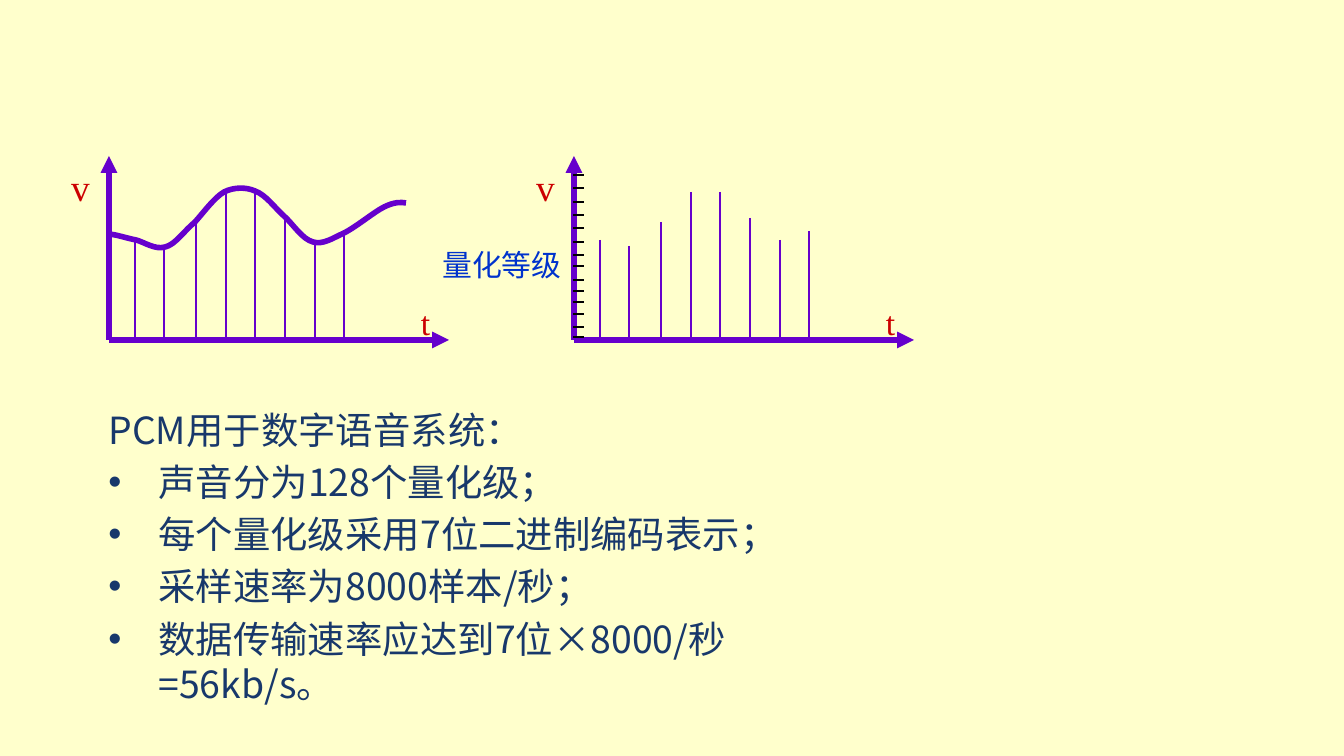
import lxml.etree
import pptx
import pptx.dml.color
import pptx.enum.shapes
import pptx.enum.text
import pptx.oxml.ns
import pptx.util
from dataclasses import dataclass

EMU_PER_PX = 914400 / 134.4
qn = pptx.oxml.ns.qn


@dataclass(frozen=True)
class Theme:
    background: str = "FFFFCC"
    signal: str = "6600CC"
    tick: str = "000000"
    body: str = "18386B"
    axis_label: str = "CC0000"
    level_label: str = "0033CC"
    body_font: str = "Noto Sans CJK SC"
    label_font: str = "Times New Roman"
    body_size: int = 20
    v_size: int = 20
    t_size: int = 18
    level_size: int = 16
    thick: float = 3
    thin: float = 0.75


THEME = Theme()

# Graph geometry: sample offsets are measured from the vertical axis
BASELINE, AXIS_TOP, AXIS_LENGTH = 340, 156, 340
ANALOG_X, QUANTIZED_X = 109, 574
SAMPLES = [(26, 240), (55, 246), (87, 222), (117, 192),
           (146, 192), (176, 218), (206, 240), (235, 231)]
LEVELS = [175, 188, 202, 215, 228, 242, 255, 266, 280, 291, 302, 314, 327, 337]

# Start point, then two control points and an end point per curve segment
WAVE = [(109, 234),
        (118, 235), (126, 238), (136, 240), (144, 242), (155, 250), (165, 247),
        (175, 245), (184, 231), (195, 222), (204, 212), (214, 198), (224, 192),
        (234, 187), (246, 187), (255, 191), (266, 195), (274, 207), (284, 216),
        (293, 224), (302, 239), (313, 242), (323, 245), (333, 238), (344, 233),
        (356, 227), (374, 212), (384, 207), (394, 202), (401, 202), (406, 203)]

HEADING = "PCM用于数字语音系统："
BULLETS = ["声音分为128个量化级；", "每个量化级采用7位二进制编码表示；",
           "采样速率为8000样本/秒；", "数据传输速率应达到7位×8000/秒\v=56kb/s。"]


def px(value):
    return pptx.util.Emu(round(value * EMU_PER_PX))


def rgb(color):
    return pptx.dml.color.RGBColor.from_string(color)


def style_font(font, name, size, color):
    font.name = name
    font.size = pptx.util.Pt(size)
    font.color.rgb = rgb(color)


def add_line(shapes, start, end, color, width, arrow=False):
    line = shapes.add_connector(pptx.enum.shapes.MSO_CONNECTOR.STRAIGHT,
                                *map(px, (*start, *end)))
    line.line.color.rgb = rgb(color)
    line.line.width = pptx.util.Pt(width)
    if arrow:
        lxml.etree.SubElement(line.line._get_or_add_ln(), qn("a:tailEnd"), type="triangle")
    lxml.etree.SubElement(line._element.spPr, qn("a:effectLst"))


def add_label(shapes, text, left, top, width, height, size, color):
    label = shapes.add_textbox(*map(px, (left, top, width, height)))
    frame = label.text_frame
    frame.word_wrap = True
    frame.margin_left = frame.margin_right = 0
    paragraph = frame.paragraphs[0]
    paragraph.text = text
    paragraph.alignment = pptx.enum.text.PP_ALIGN.CENTER
    style_font(paragraph.font, THEME.label_font, size, color)


def add_wave(shapes, points):
    builder = shapes.build_freeform(*points[0], scale=EMU_PER_PX)
    builder.add_line_segments(points[1:], close=False)
    wave = builder.convert_to_shape()
    wave.shadow.inherit = False
    wave.fill.background()
    wave.line.color.rgb = rgb(THEME.signal)
    wave.line.width = pptx.util.Pt(THEME.thick)
    # Turn every three straight segments into one cubic curve
    outline = next(wave._element.iter(qn("a:path")))
    segments = outline.findall(qn("a:lnTo"))
    for first in range(0, len(segments), 3):
        curve = lxml.etree.SubElement(outline, qn("a:cubicBezTo"))
        for segment in segments[first:first + 3]:
            curve.append(segment[0])
            outline.remove(segment)


def add_graph(slide, origin):
    shapes = slide.shapes.add_group_shape().shapes
    corner = (origin, BASELINE)
    # Axes
    for end in ((origin, AXIS_TOP), (origin + AXIS_LENGTH, BASELINE)):
        add_line(shapes, corner, end, THEME.signal, THEME.thick, arrow=True)
    # Samples
    for offset, top in SAMPLES:
        x = origin + offset
        add_line(shapes, (x, top), (x, BASELINE), THEME.signal, THEME.thin)
    # Axis names
    add_label(shapes, "t", origin + 291, 295, 51, 54, THEME.t_size, THEME.axis_label)
    add_label(shapes, "v", origin - 48, 158, 39, 58, THEME.v_size, THEME.axis_label)
    return shapes


def add_levels(slide, origin):
    shapes = slide.shapes.add_group_shape().shapes
    for y in LEVELS:
        add_line(shapes, (origin + 10, y), (origin - 1, y), THEME.tick, THEME.thin)


def format_paragraph(paragraph, text, bullet):
    paragraph.text = text
    properties = paragraph._p.get_or_add_pPr()
    properties.set("marL", str(px(50)))
    properties.set("indent", str(px(-50)))
    if bullet:
        lxml.etree.SubElement(properties, qn("a:buFont"), typeface="Arial")
        lxml.etree.SubElement(properties, qn("a:buChar"), char="•")
    else:
        lxml.etree.SubElement(properties, qn("a:buNone"))
    paragraph.space_before = pptx.util.Pt(4 if bullet else 0)
    style_font(paragraph.font, THEME.body_font, THEME.body_size, THEME.body)
    lxml.etree.SubElement(paragraph.font._element, qn("a:ea"), typeface=THEME.body_font)


def fill_body(body):
    body.left, body.top, body.width, body.height = map(px, (95, 400, 874, 306))
    frame = body.text_frame
    frame.word_wrap = True
    frame.auto_size = pptx.enum.text.MSO_AUTO_SIZE.NONE
    frame.vertical_anchor = pptx.enum.text.MSO_ANCHOR.TOP
    format_paragraph(frame.paragraphs[0], HEADING, bullet=False)
    for text in BULLETS:
        format_paragraph(frame.add_paragraph(), text, bullet=True)


def main():
    presentation = pptx.Presentation()
    presentation.slide_width, presentation.slide_height = px(1344), px(756)
    slide = presentation.slides.add_slide(presentation.slide_layouts[1])
    slide.background.fill.solid()
    slide.background.fill.fore_color.rgb = rgb(THEME.background)

    # Body text; the slide has no title
    title = slide.shapes.title._element
    title.getparent().remove(title)
    fill_body(slide.placeholders[1])

    # Analog signal with its samples
    add_wave(add_graph(slide, ANALOG_X), WAVE)

    # Quantized samples with the level scale
    add_graph(slide, QUANTIZED_X)
    add_levels(slide, QUANTIZED_X)
    add_label(slide.shapes, "量化等级", 396, 240, 212, 50,
              THEME.level_size, THEME.level_label)

    presentation.save("out.pptx")


if __name__ == "__main__":
    main()
